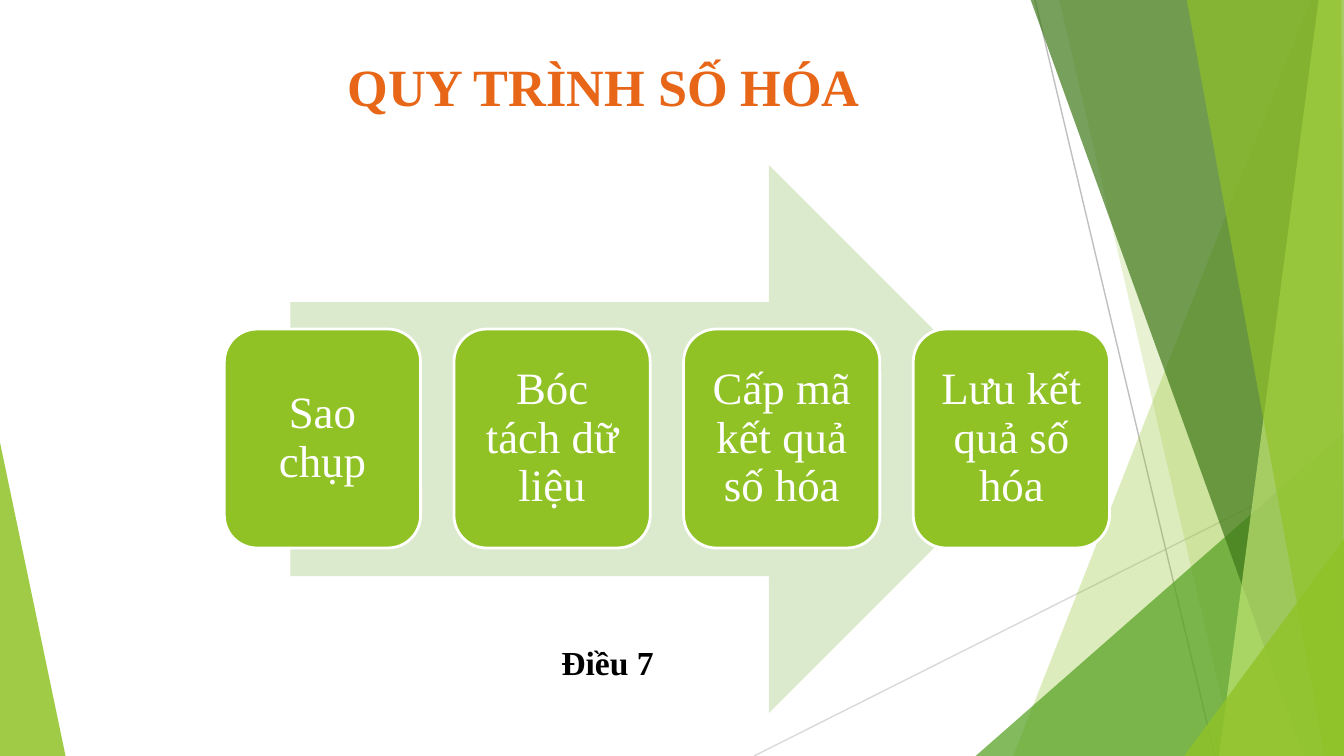
from dataclasses import dataclass

from lxml import etree
from pptx import Presentation
from pptx.dml.color import RGBColor
from pptx.enum.shapes import MSO_CONNECTOR, MSO_SHAPE
from pptx.enum.text import MSO_ANCHOR, MSO_AUTO_SIZE, PP_ALIGN
from pptx.oxml.ns import qn
from pptx.util import Cm, Pt

STRAIGHT = MSO_CONNECTOR.STRAIGHT
ARROW, ROUNDED = MSO_SHAPE.RIGHT_ARROW, MSO_SHAPE.ROUNDED_RECTANGLE
MIDDLE, TOP = MSO_ANCHOR.MIDDLE, MSO_ANCHOR.TOP
CENTER, LEFT = PP_ALIGN.CENTER, PP_ALIGN.LEFT
NO_AUTOFIT = MSO_AUTO_SIZE.NONE

WIDTH, HEIGHT = 25.4, 14.29  # cm


@dataclass(frozen=True)
class Theme:
    font: str = "Times New Roman"
    title_size: int = 28
    step_size: int = 24
    label_size: int = 18
    orange: str = "E76618"
    black: str = "000000"
    white: str = "FFFFFF"
    lime: str = "90C226"
    pale_lime: str = "C0E474"
    green: str = "54A021"
    dark_green: str = "3F7819"
    pale_green: str = "DBE9CD"
    light_gray: str = "D9D9D9"
    gray: str = "BFBFBF"


THEME = Theme()

STEPS = ["Sao chụp", "Bóc tách dữ liệu", "Cấp mã kết quả số hóa", "Lưu kết quả số hóa"]

# Start, end and colour, in cm
RAYS = [
    ((14.25, HEIGHT), (WIDTH, 8.69), THEME.light_gray),
    ((19.56, 0), (22.96, HEIGHT), THEME.gray),
]

# Corner points in cm, colour and opacity in percent, from back to front
FACETS = [
    ([(0, 8.36), (1.24, HEIGHT), (0, HEIGHT)], THEME.lime, 85),
    ([(24.77, 0), (19.15, HEIGHT), (WIDTH, HEIGHT), (WIDTH, 0)], THEME.lime, 30),
    ([(20.02, 0), (23.34, HEIGHT), (WIDTH, HEIGHT), (WIDTH, 0)], THEME.lime, 20),
    ([(18.44, HEIGHT), (WIDTH, 8.18), (WIDTH, HEIGHT)], THEME.green, 72),
    ([(19.48, 0), (24.64, HEIGHT), (WIDTH, HEIGHT), (WIDTH, 0)], THEME.dark_green, 70),
    ([(24.92, 0), (23.04, HEIGHT), (WIDTH, HEIGHT), (WIDTH, 0)], THEME.pale_lime, 70),
    ([(22.43, 0), (25.04, HEIGHT), (WIDTH, HEIGHT), (25.35, 0)], THEME.lime, 65),
    ([(22.38, HEIGHT), (WIDTH, 10.19), (WIDTH, HEIGHT)], THEME.lime, 80),
]


def rgb(color):
    return RGBColor.from_string(color)


def fill_shape(sp, color):
    """Give a shape a flat fill, without line or shadow."""
    sp.shadow.inherit = False
    sp.fill.solid()
    sp.fill.fore_color.rgb = rgb(color)
    sp.line.fill.background()


def write(tf, text, size, color, bold=False, align=LEFT, anchor=TOP):
    tf.word_wrap = True
    tf.auto_size = NO_AUTOFIT
    tf.vertical_anchor = anchor
    p = tf.paragraphs[0]
    p.alignment = align
    r = p.add_run()
    r.text = text
    r.font.name = THEME.font
    r.font.size = Pt(size)
    r.font.bold = bold
    r.font.color.rgb = rgb(color)
    return p


def add_ray(slide, start, end, color):
    line = slide.shapes.add_connector(STRAIGHT, *map(Cm, start + end))
    line.line.color.rgb = rgb(color)
    line.line.width = Pt(0.75)
    etree.SubElement(line._element.spPr, qn("a:effectLst"))


def add_facet(slide, points, color, opacity):
    start, *rest = [(Cm(x), Cm(y)) for x, y in points]
    builder = slide.shapes.build_freeform(*start)
    builder.add_line_segments(rest, close=True)
    sp = builder.convert_to_shape()
    fill_shape(sp, color)
    clr = sp._element.spPr.find(qn("a:solidFill")).find(qn("a:srgbClr"))
    etree.SubElement(clr, qn("a:alpha")).set("val", str(opacity * 1000))


def add_title(slide, text):
    title = slide.shapes.title
    title.left, title.top, title.width, title.height = map(Cm, (2.11, 0.79, 17.35, 1.65))
    write(title.text_frame, text, THEME.title_size, THEME.orange, True, CENTER, MIDDLE)
    title.text_frame.margin_left = Cm(1.5)


def add_step(slide, index, text):
    left, pitch = 4.24, 4.34
    sp = slide.shapes.add_shape(
        ROUNDED, Cm(left + index * pitch), Cm(6.22), Cm(3.71), Cm(4.14))
    fill_shape(sp, THEME.lime)
    sp.line.color.rgb = rgb(THEME.white)
    sp.line.width = Pt(1.5)
    tf = sp.text_frame
    tf.margin_left = tf.margin_right = tf.margin_top = tf.margin_bottom = Cm(0.25)
    p = write(tf, text, THEME.step_size, THEME.white, align=CENTER, anchor=MIDDLE)
    p.line_spacing = 0.9


def add_process(slide, steps):
    arrow = slide.shapes.add_shape(ARROW, Cm(5.49), Cm(3.12), Cm(14.22), Cm(10.36))
    fill_shape(arrow, THEME.pale_green)
    for index, text in enumerate(steps):
        add_step(slide, index, text)


def add_label(slide, text):
    box = slide.shapes.add_textbox(Cm(10.36), Cm(12.01), Cm(2.97), Cm(1.02))
    write(box.text_frame, text, THEME.label_size, THEME.black, bold=True)


def main():
    prs = Presentation()
    prs.slide_width, prs.slide_height = Cm(WIDTH), Cm(HEIGHT)
    slide = prs.slides.add_slide(prs.slide_layouts[5])
    for ray in RAYS:
        add_ray(slide, *ray)
    for facet in FACETS:
        add_facet(slide, *facet)
    add_title(slide, "QUY TRÌNH SỐ HÓA")
    add_process(slide, STEPS)
    add_label(slide, "Điều 7")
    prs.save("out.pptx")


if __name__ == "__main__":
    main()
